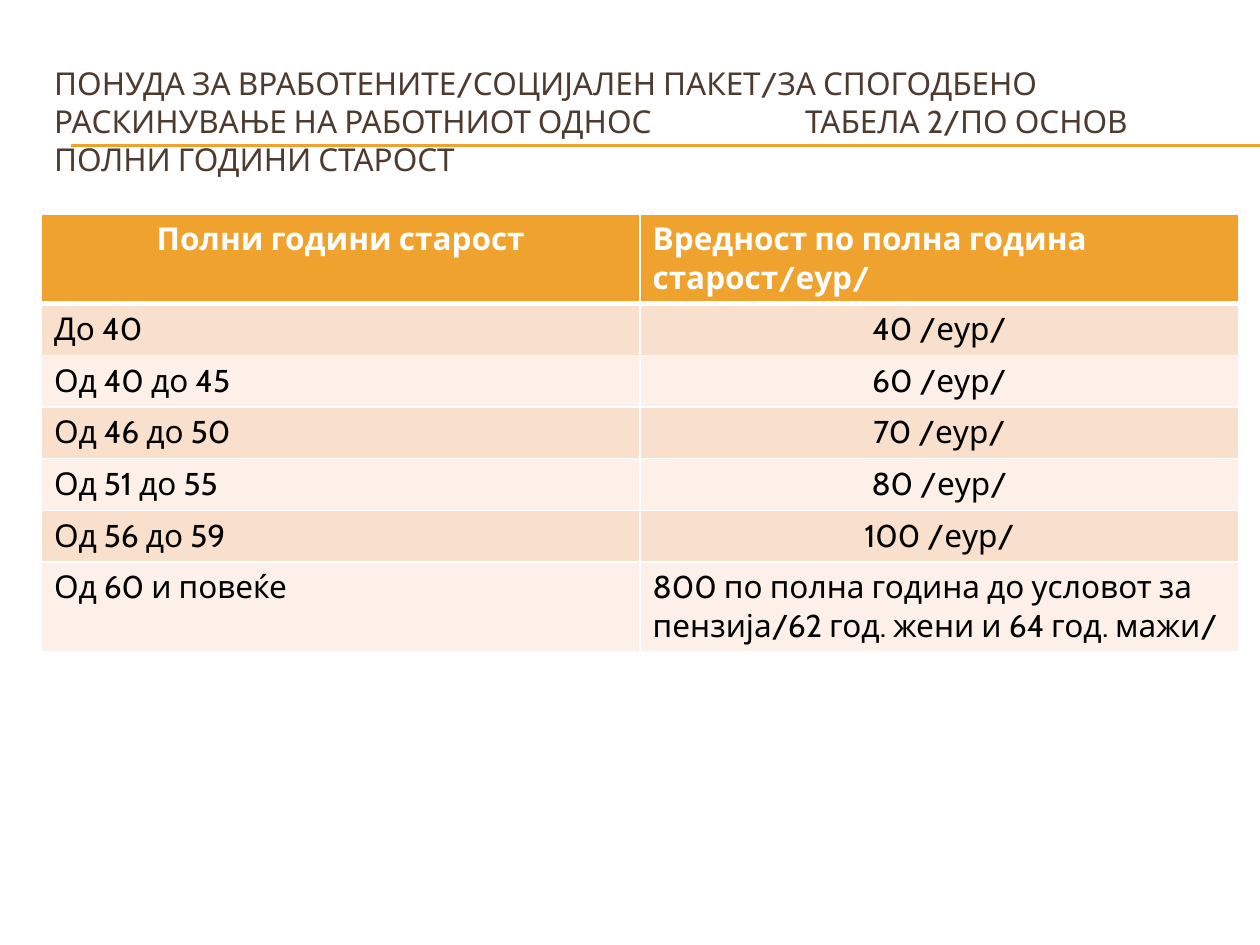
from pptx import Presentation
from pptx.dml.color import RGBColor as RGB
from pptx.enum.shapes import MSO_CONNECTOR as LINE
from pptx.enum.text import MSO_ANCHOR as ANCHOR, MSO_AUTO_SIZE as FIT, PP_ALIGN as ALIGN
from pptx.oxml.ns import qn
from pptx.util import Inches, Pt
from lxml.etree import SubElement, Element

COLORS = {
    "accent": "F0A22E",
    "title": "4E3B30",
    "odd": "F9E0CD",
    "even": "FCF0E8",
    "white": "FFFFFF",
    "black": "000000",
}
HEADING = (
    "ПОНУДА ЗА ВРАБОТЕНИТЕ/СОЦИЈАЛЕН ПАКЕТ/ЗА СПОГОДБЕНО РАСКИНУВАЊЕ "
    "НА РАБОТНИОТ ОДНОС\tТАБЕЛА 2/ПО ОСНОВ ПОЛНИ ГОДИНИ СТАРОСТ"
)
RATES = [
    ("Полни години старост", "Вредност по полна година старост/еур/"),
    ("До 40", "40 /еур/"),
    ("Од 40 до 45", "60 /еур/"),
    ("Од 46 до 50", "70 /еур/"),
    ("Од 51 до 55", "80 /еур/"),
    ("Од 56 до 59", "100 /еур/"),
    ("Од 60 и повеќе", "800 по полна година до условот за пензија/62 год. жени и 64 год. мажи/"),
]
CENTERED = {(0, 0)} | {(row, 1) for row in range(1, 6)}


def write(frame, text, color, align, bold=False):
    frame.text = text
    paragraph = frame.paragraphs[0]
    paragraph.alignment = align
    for run in paragraph.runs:
        run.font.name = "Cabin"
        run.font.size = Pt(18)
        run.font.bold = bold
        run.font.color.rgb = RGB.from_string(COLORS[color])


def add_border(cell, order, side, points):
    border = Element(qn(f"a:ln{side}"), w=str(Pt(points)))
    fill = SubElement(border, qn("a:solidFill"))
    SubElement(fill, qn("a:srgbClr"), val=COLORS["white"])
    cell._tc.get_or_add_tcPr().insert(order, border)


prs = Presentation()
prs.slide_width, prs.slide_height = Inches(10), Inches(7.5)
slide = prs.slides.add_slide(prs.slide_layouts[5])
left, width = Inches(0.33), Inches(9.5)

heading = slide.shapes.title
heading.left, heading.top, heading.width, heading.height = left, Inches(0.5), width, Inches(0.92)
heading.text_frame.word_wrap = True
heading.text_frame.auto_size = FIT.NONE
heading.text_frame.vertical_anchor = ANCHOR.MIDDLE
write(heading.text_frame, HEADING, "title", ALIGN.LEFT)
tabs = SubElement(heading.text_frame.paragraphs[0]._p.get_or_add_pPr(), qn("a:tabLst"))
SubElement(tabs, qn("a:tab"), pos=str(Inches(5.96)), algn="l")

for y in (1.15, 1.16):
    rule = slide.shapes.add_connector(LINE.STRAIGHT, Inches(0.56), Inches(y), prs.slide_width, Inches(y))
    rule.line.color.rgb = RGB.from_string(COLORS["accent"])
    rule.line.width = Pt(0.75)
    SubElement(rule._element.spPr, qn("a:effectLst"))
    heading._element.addprevious(rule._element)

row_height = Inches(0.41)
rates = slide.shapes.add_table(
    len(RATES), 2, left, Inches(1.7), width, row_height * len(RATES)
).table
for row, values in enumerate(RATES):
    rates.rows[row].height = row_height
    header = row == 0
    band = "accent" if header else "odd" if row % 2 else "even"
    for column, value in enumerate(values):
        cell = rates.cell(row, column)
        cell.fill.solid()
        cell.fill.fore_color.rgb = RGB.from_string(COLORS[band])
        align = ALIGN.CENTER if (row, column) in CENTERED else ALIGN.LEFT
        write(cell.text_frame, value, "white" if header else "black", align, header)
        sides = {"L": 1, "R": 1, "T": 3 if row == 1 else 1, "B": 3 if header else 1}
        for order, (side, points) in enumerate(sides.items()):
            add_border(cell, order, side, points)

prs.save("out.pptx")
